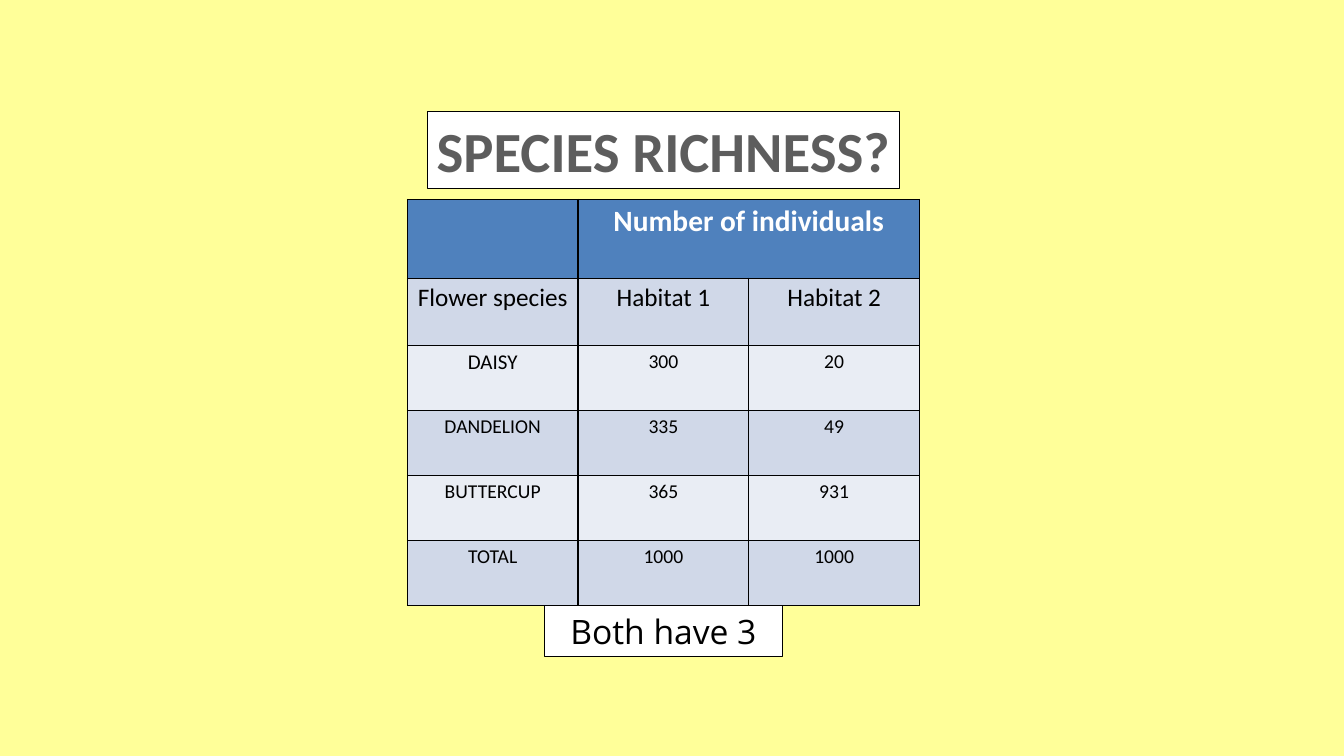
"""Build a slide comparing the species richness of two habitats."""
from lxml.etree import fromstring
from pptx import Presentation
from pptx.dml.color import RGBColor
from pptx.enum.text import MSO_ANCHOR, MSO_AUTO_SIZE, PP_ALIGN
from pptx.util import Inches, Pt

NS = "http://schemas.openxmlformats.org/drawingml/2006/main"


def paint(fill, tone):
    fill.solid()
    fill.fore_color.rgb = RGBColor.from_string(tone)


def write(frame, text, size, tone="000000", face="Calibri", bold=False):
    frame.text = text
    par = frame.paragraphs[0]
    par.alignment = PP_ALIGN.CENTER
    look = {"size": Pt(size), "name": face, "bold": bold}
    for key, value in look.items():
        setattr(par.runs[0].font, key, value)
    paint(par.runs[0].font.fill, tone)


deck = Presentation()
deck.slide_width, deck.slide_height = Inches(13.33), Inches(7.5)
slide = deck.slides.add_slide(deck.slide_layouts[5])
paint(slide.background.fill, "FFFF99")

title = slide.shapes.title
answer = slide.shapes.add_textbox(0, 0, 0, 0)
boxes = [
    (title, (4.24, 1.11, 4.68, 0.76), 0.07, False,
     ("SPECIES RICHNESS?", 40.5, "5D5D5D", "Calibri", True)),
    (answer, (5.4, 6.01, 2.36, 0.5), 0.1, True,
     ("Both have 3", 24, "000000", "Open Sans")),
]
for box, place, side, wrap, words in boxes:
    for key, value in zip(("left", "top", "width", "height"), place):
        setattr(box, key, Inches(value))
    paint(box.fill, "FFFFFF")
    paint(box.line.fill, "000000")
    box.line.width = Pt(0.75)
    form = {"margin_left": Inches(side), "margin_right": Inches(side),
            "margin_top": Inches(0.04), "margin_bottom": Inches(0.04),
            "word_wrap": wrap, "auto_size": MSO_AUTO_SIZE.NONE,
            "vertical_anchor": MSO_ANCHOR.MIDDLE}
    for key, value in form.items():
        setattr(box.text_frame, key, value)
    write(box.text_frame, *words)

rows = [
    ("", "Number of individuals", ""),
    ("Flower species", "Habitat 1", "Habitat 2"),
    ("DAISY", "300", "20"),
    ("DANDELION", "335", "49"),
    ("BUTTERCUP", "365", "931"),
    ("TOTAL", "1000", "1000"),
]
high, head, sub = 4.03, 0.78, 0.67
rest = (high - head - sub) / (len(rows) - 2)
table = slide.shapes.add_table(
    len(rows), 3, Inches(4.04), Inches(1.98), Inches(5.08), Inches(high)).table
table.cell(0, 1).merge(table.cell(0, 2))
pad = {"margin_left": Inches(0.08), "margin_right": Inches(0.08),
       "margin_top": Inches(0.04), "margin_bottom": Inches(0.04)}

for r, row in enumerate(rows):
    table.rows[r].height = Inches((head, sub)[r] if r < 2 else rest)
    tone = "4F81BD" if r == 0 else ("E9EDF4", "D0D8E8")[r % 2]
    if r == len(rows) - 1:
        tone = "D0D8E8"
    for c, text in enumerate(row):
        cell = table.cell(r, c)
        for key, value in pad.items():
            setattr(cell, key, value)
        paint(cell.fill, tone)
        if text:
            size = {0: 21, 1: 18}.get(r, 15 if text == "DAISY" else 14)
            ink = "FFFFFF" if r == 0 else "000000"
            write(cell.text_frame, text, size, ink, bold=r == 0)
        props = cell._tc.get_or_add_tcPr()
        for i, edge in enumerate("LRTB"):
            props.insert(i, fromstring(
                f'<a:ln{edge} xmlns:a="{NS}" w="{Pt(1)}"><a:solidFill>'
                f'<a:srgbClr val="000000"/></a:solidFill></a:ln{edge}>'))

deck.save("out.pptx")
